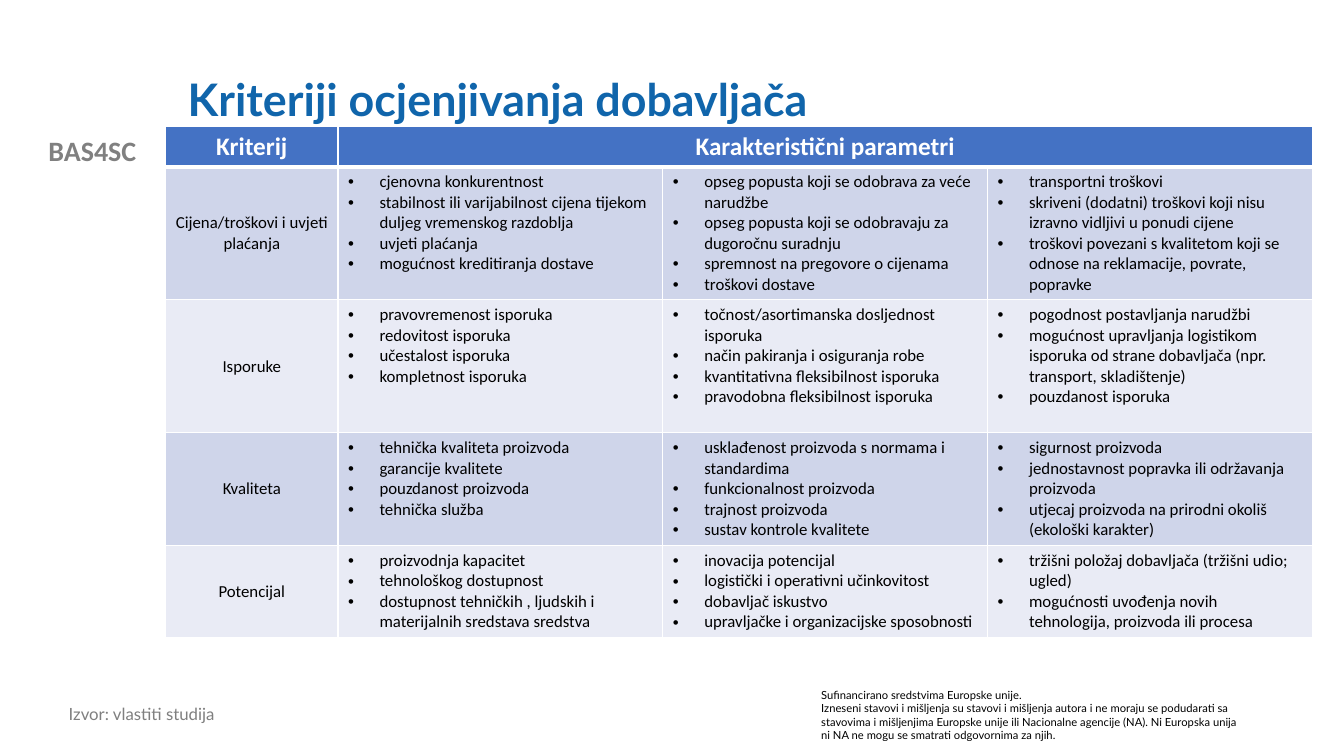
from lxml.etree import SubElement
from pptx import Presentation
from pptx.dml.color import RGBColor
from pptx.enum.text import MSO_ANCHOR, PP_ALIGN
from pptx.oxml.ns import qn
from pptx.util import Pt

WHITE = RGBColor(0xFF, 0xFF, 0xFF)
BLACK = RGBColor(0x00, 0x00, 0x00)
GREY = RGBColor(0x80, 0x80, 0x80)
SOURCE_GREY = RGBColor(0x7F, 0x7F, 0x7F)
TITLE_BLUE = RGBColor(0x10, 0x65, 0xAB)
HEADER_BLUE = RGBColor(0x44, 0x72, 0xC4)
BANDS = (RGBColor(0xCF, 0xD5, 0xEA), RGBColor(0xE9, 0xEB, 0xF5))

COLUMN_WIDTHS = (123, 232, 232, 232)
ROW_HEIGHTS = (29.2, 95, 95, 80.5, 65.8)
BULLET_INDENT = 22.5

DISCLAIMER = (
    "Sufinancirano sredstvima Europske unije.\n"
    "Izneseni stavovi i mišljenja su stavovi i mišljenja autora i ne moraju se "
    "podudarati sa stavovima i mišljenjima Europske unije ili Nacionalne agencije "
    "(NA). Ni Europska unija ni NA ne mogu se smatrati odgovornima za njih."
)

# Each criterion with its three columns of parameters
CRITERIA = (
    ("Cijena/troškovi i uvjeti plaćanja", (
        ("cjenovna konkurentnost",
         "stabilnost ili varijabilnost cijena tijekom duljeg vremenskog razdoblja",
         "uvjeti plaćanja",
         "mogućnost kreditiranja dostave"),
        ("opseg popusta koji se odobrava za veće narudžbe",
         "opseg popusta koji se odobravaju za dugoročnu suradnju",
         "spremnost na pregovore o cijenama",
         "troškovi dostave"),
        ("transportni troškovi",
         "skriveni (dodatni) troškovi koji nisu izravno vidljivi u ponudi cijene",
         "troškovi povezani s kvalitetom koji se odnose na reklamacije, povrate, "
         "popravke"),
    )),
    ("Isporuke", (
        ("pravovremenost isporuka",
         "redovitost isporuka",
         "učestalost isporuka",
         "kompletnost isporuka"),
        ("točnost/asortimanska dosljednost isporuka",
         "način pakiranja i osiguranja robe",
         "kvantitativna fleksibilnost isporuka",
         "pravodobna fleksibilnost isporuka"),
        ("pogodnost postavljanja narudžbi",
         "mogućnost upravljanja logistikom isporuka od strane dobavljača "
         "(npr. transport, skladištenje)",
         "pouzdanost isporuka"),
    )),
    ("Kvaliteta", (
        ("tehnička kvaliteta proizvoda",
         "garancije kvalitete",
         "pouzdanost proizvoda",
         "tehnička služba"),
        ("usklađenost proizvoda s normama i standardima",
         "funkcionalnost proizvoda",
         "trajnost proizvoda",
         "sustav kontrole kvalitete"),
        ("sigurnost proizvoda",
         "jednostavnost popravka ili održavanja proizvoda",
         "utjecaj proizvoda na prirodni okoliš (ekološki karakter)"),
    )),
    ("Potencijal", (
        ("proizvodnja kapacitet",
         "tehnološkog dostupnost",
         "dostupnost tehničkih , ljudskih i materijalnih sredstava sredstva"),
        ("inovacija potencijal",
         "logistički i operativni učinkovitost",
         "dobavljač iskustvo",
         "upravljačke i organizacijske sposobnosti"),
        ("tržišni položaj dobavljača (tržišni udio; ugled)",
         "mogućnosti uvođenja novih tehnologija, proizvoda ili procesa"),
    )),
)


def format_text(frame, font, size, color, bold=False, align=PP_ALIGN.LEFT, spacing=None):
    for paragraph in frame.paragraphs:
        paragraph.alignment = align
        paragraph.line_spacing = spacing
        for run in paragraph.runs:
            run.font.name = font
            run.font.size = Pt(size)
            run.font.color.rgb = color
            run.font.bold = bold


def add_label(slide, text, left, top, width, height, anchor=MSO_ANCHOR.TOP, **style):
    box = slide.shapes.add_textbox(Pt(left), Pt(top), Pt(width), Pt(height))
    frame = box.text_frame
    frame.word_wrap = True
    frame.vertical_anchor = anchor
    frame.text = text
    format_text(frame, **style)


def add_bullets(frame):
    for paragraph in frame.paragraphs:
        properties = paragraph._p.get_or_add_pPr()
        properties.set("marL", str(Pt(BULLET_INDENT)))
        properties.set("indent", str(-Pt(BULLET_INDENT)))
        SubElement(properties, qn("a:buFont"), typeface="Arial")
        SubElement(properties, qn("a:buChar"), char="•")


def set_borders(cell, top, bottom):
    properties = cell._tc.get_or_add_tcPr()
    for side, width in (("L", 1), ("R", 1), ("T", top), ("B", bottom)):
        line = SubElement(properties, qn(f"a:ln{side}"), w=str(Pt(width)))
        fill = SubElement(line, qn("a:solidFill"))
        SubElement(fill, qn("a:srgbClr"), val=str(WHITE))


def paint_cell(cell, color, top=1, bottom=1):
    set_borders(cell, top, bottom)
    cell.fill.solid()
    cell.fill.fore_color.rgb = color


def write_heading(cell, text, size, color, bold=False):
    cell.vertical_anchor = MSO_ANCHOR.MIDDLE
    cell.text_frame.text = text
    format_text(cell.text_frame, "Calibri", size, color, bold, PP_ALIGN.CENTER)


def write_parameters(cell, parameters):
    cell.text_frame.text = "\n".join(parameters)
    add_bullets(cell.text_frame)
    format_text(cell.text_frame, "Calibri", 12, BLACK)


def add_criteria_table(slide, left, top):
    table = slide.shapes.add_table(
        len(ROW_HEIGHTS), len(COLUMN_WIDTHS), Pt(left), Pt(top),
        Pt(sum(COLUMN_WIDTHS)), Pt(sum(ROW_HEIGHTS))).table
    for column, width in zip(table.columns, COLUMN_WIDTHS):
        column.width = Pt(width)
    for row, height in zip(table.rows, ROW_HEIGHTS):
        row.height = Pt(height)

    # Header row
    for column in range(len(COLUMN_WIDTHS)):
        paint_cell(table.cell(0, column), HEADER_BLUE, bottom=3)
    table.cell(0, 1).merge(table.cell(0, 3))
    for column, heading in enumerate(("Kriterij", "Karakteristični parametri")):
        write_heading(table.cell(0, column), heading, 18, WHITE, bold=True)

    # Criterion rows in alternating bands
    for row, (criterion, parameter_columns) in enumerate(CRITERIA, start=1):
        for column in range(len(COLUMN_WIDTHS)):
            paint_cell(table.cell(row, column), BANDS[(row - 1) % 2],
                       top=3 if row == 1 else 1)
        write_heading(table.cell(row, 0), criterion, 12, BLACK)
        for column, parameters in enumerate(parameter_columns, start=1):
            write_parameters(table.cell(row, column), parameters)


def main():
    presentation = Presentation()
    presentation.slide_width = Pt(960)
    presentation.slide_height = Pt(540)
    slide = presentation.slides.add_slide(presentation.slide_layouts[6])

    # Project name and disclaimer
    add_label(slide, "BAS4SC", 0, 92, 132, 32, font="Calibri", size=20,
              color=GREY, bold=True, align=PP_ALIGN.CENTER)
    add_label(slide, DISCLAIMER, 579.5, 488, 314.5, 46, font="Lato", size=8, color=BLACK)

    # Title and source
    add_label(slide, "Kriteriji ocjenjivanja dobavljača", 127, 29, 767, 88,
              anchor=MSO_ANCHOR.MIDDLE, font="Lato", size=32, color=TITLE_BLUE,
              bold=True, spacing=0.9)
    add_label(slide, "Izvor: vlastiti studija", 42, 501, 432, 25, font="Lato",
              size=12, color=SOURCE_GREY, spacing=0.9)

    add_criteria_table(slide, 118.4, 90)
    presentation.save("out.pptx")


if __name__ == "__main__":
    main()
